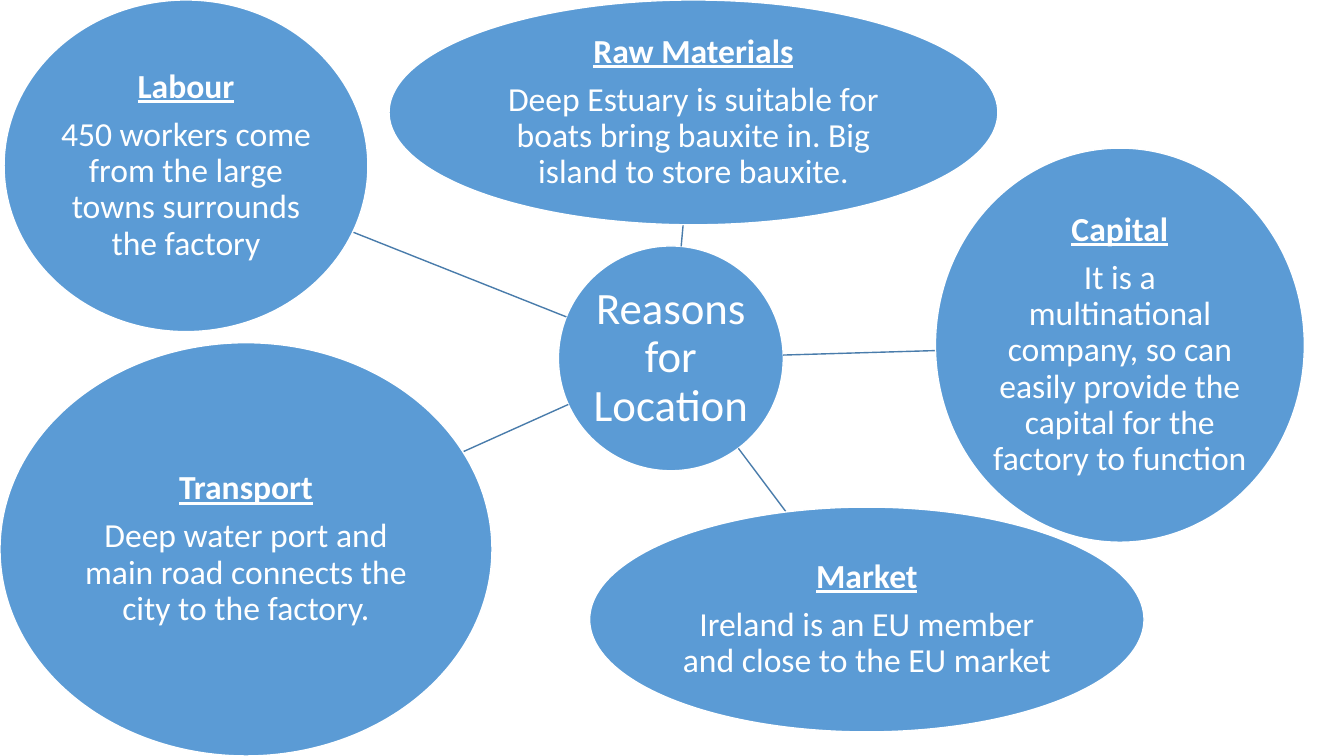
from math import hypot

from lxml.etree import SubElement
from pptx import Presentation
from pptx.dml.color import RGBColor
from pptx.enum.shapes import MSO_CONNECTOR, MSO_SHAPE
from pptx.enum.text import MSO_ANCHOR, MSO_AUTO_SIZE, PP_ALIGN
from pptx.oxml.ns import qn
from pptx.util import Pt


def rgb(value):
    return RGBColor.from_string(value)


def center(box):
    x, y, w, h = box
    return x + w / 2, y + h / 2


def rim_point(box, target):
    """Point where the line from the ellipse's centre to target leaves it."""
    cx, cy = center(box)
    dx, dy = target[0] - cx, target[1] - cy
    t = 1 / hypot(dx / (box[2] / 2), dy / (box[3] / 2))
    return cx + t * dx, cy + t * dy


def inscribed(box):
    """Text rectangle of an ellipse."""
    cx, cy = center(box)
    w, h = box[2] * 0.5 ** 0.5, box[3] * 0.5 ** 0.5
    return cx - w / 2, cy - h / 2, w, h


class Diagram:
    font, fill, spoke_color, white = "Calibri", "5B9BD5", "497CAB", "FFFFFF"
    inset = 1.4

    def __init__(self, slide):
        self.slide = slide

    def ellipse(self, box):
        sp = self.slide.shapes.add_shape(MSO_SHAPE.OVAL, *map(Pt, box))
        sp.shadow.inherit = False
        sp.fill.solid()
        sp.fill.fore_color.rgb = rgb(self.fill)
        sp.line.color.rgb = rgb(self.white)
        sp.line.width = Pt(1)
        return sp

    def text(self, sp, paragraphs, size):
        tf = sp.text_frame
        tf.word_wrap = True
        tf.auto_size = MSO_AUTO_SIZE.NONE
        tf.vertical_anchor = MSO_ANCHOR.MIDDLE
        tf.margin_left = tf.margin_right = Pt(self.inset)
        tf.margin_top = tf.margin_bottom = Pt(self.inset)
        for i, (text, heading) in enumerate(paragraphs):
            p = tf.add_paragraph() if i else tf.paragraphs[0]
            p.alignment = PP_ALIGN.CENTER
            p.line_spacing = 0.9
            p.space_before = Pt(0)
            p.space_after = Pt(0.35 * size)
            r = p.add_run()
            r.text = text
            r.font.name = self.font
            r.font.size = Pt(size)
            r.font.bold = r.font.underline = heading
            r.font.color.rgb = rgb(self.white)

    def title(self, box, text, size):
        sp = self.slide.shapes.title
        sp.left, sp.top, sp.width, sp.height = map(Pt, inscribed(box))
        self.text(sp, [(text, False)], size)
        # Bring the title in front of its circle
        self.slide.shapes._spTree.append(sp._element)

    def spoke(self, hub, box):
        start = rim_point(hub, center(box))
        end = rim_point(box, center(hub))
        line = self.slide.shapes.add_connector(
            MSO_CONNECTOR.STRAIGHT, *map(Pt, start + end))
        line.line.color.rgb = rgb(self.spoke_color)
        line.line.width = Pt(1)
        SubElement(line._element.spPr, qn("a:effectLst"))

    def reason(self, hub, box, heading, body):
        self.spoke(hub, box)
        self.text(self.ellipse(box), [(heading, True), (body, False)], 24)


HUB = (398.9, 175.7, 160.6, 160.6)
REASONS = [
    ((277.9, 0, 434.9, 160.6), "Raw Materials",
     "Deep Estuary is suitable for boats bring bauxite in. "
     "Big island to store bauxite."),
    ((668.2, 105.8, 263.5, 281.5), "Capital",
     "It is a multinational company, so can easily provide the capital "
     "for the factory to function"),
    ((421.2, 362.2, 396, 160.6), "Market",
     "Ireland is an EU member and close to the EU market"),
    ((0, 244.8, 351.4, 295.2), "Transport",
     "Deep water port and main road connects the city to the factory."),
    ((2.9, 0, 259.9, 236.9), "Labour",
     "450 workers come from the large towns surrounds the factory"),
]


def main():
    prs = Presentation()
    prs.slide_width, prs.slide_height = Pt(960), Pt(540)
    s = prs.slides.add_slide(prs.slide_layouts[5])
    diagram = Diagram(s)

    # Hub with the slide title
    diagram.ellipse(HUB)
    diagram.title(HUB, "Reasons for Location", 32)

    # Reasons around the hub
    for box, heading, body in REASONS:
        diagram.reason(HUB, box, heading, body)

    prs.save("out.pptx")


if __name__ == "__main__":
    main()
